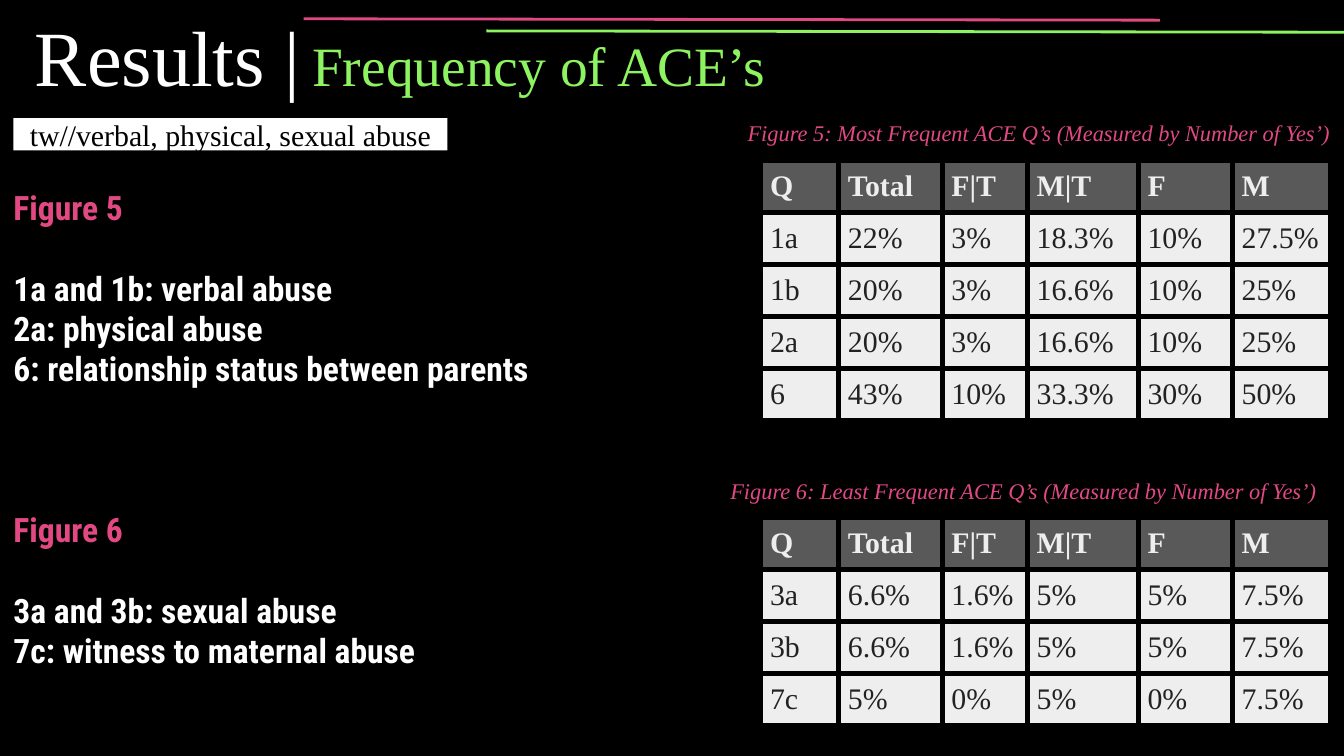
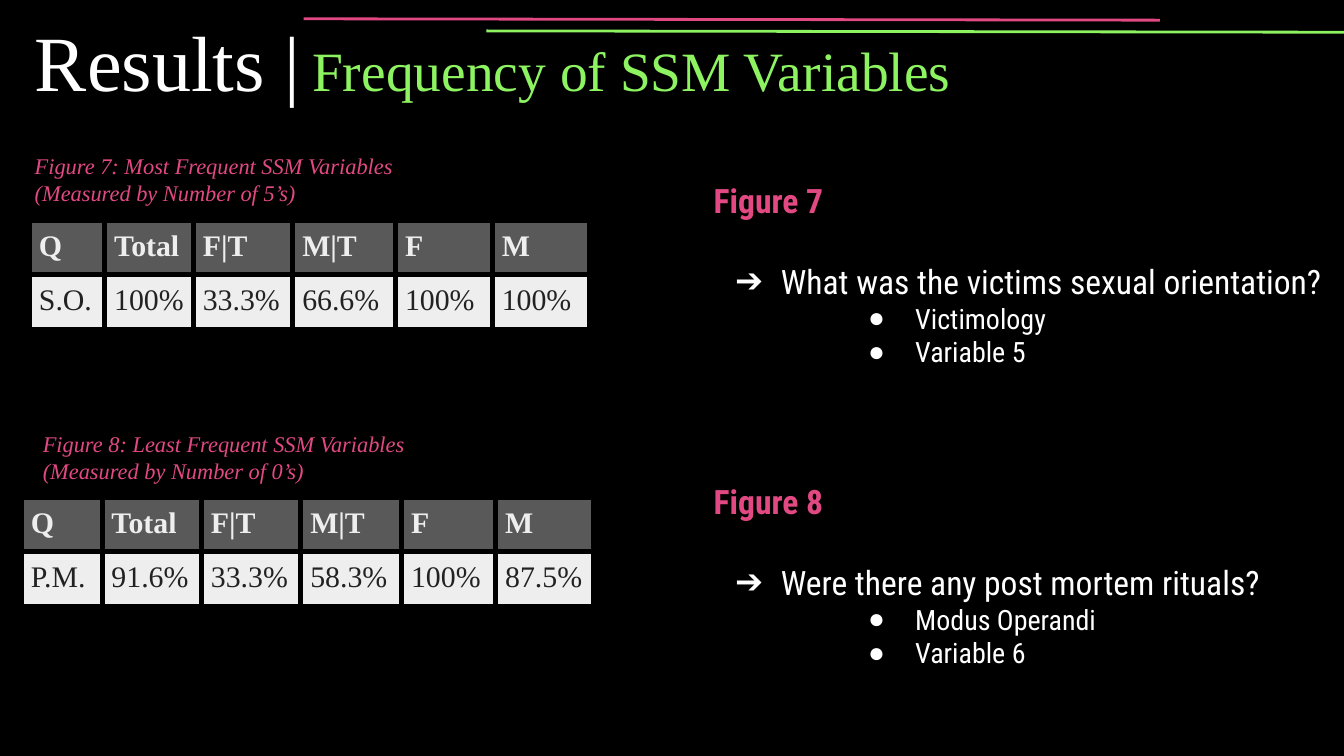
from lxml.etree import SubElement
from pptx import Presentation
from pptx.dml.color import RGBColor
from pptx.enum.shapes import MSO_CONNECTOR, MSO_SHAPE
from pptx.enum.text import MSO_ANCHOR, MSO_AUTO_SIZE, PP_ALIGN
from pptx.oxml.ns import qn
from pptx.util import Inches, Pt

SERIF, SANS = "Times New Roman", "Roboto Condensed"
BLACK, WHITE, PINK, GREEN = "000000", "FFFFFF", "E24983", "8DF361"
HEADER_FILL, CELL_FILL, CELL_INK = "595959", "EEEEEE", "222222"
TITLE_CONTENT, TWO_CONTENT = 1, 3
HEADER = ["Q", "Total", "F|T", "M|T", "F", "M"]
LINE = 21.6  # height of one 18 pt line, in points


def color(value):
    return RGBColor.from_string(value)


def grid(units):
    """The slide is a grid of 100 columns; rows are as tall as columns are wide."""
    return Inches(units / 10)


class ResultsDeck:
    def __init__(self):
        self.deck = Presentation()
        self.deck.slide_width = grid(100)
        self.deck.slide_height = grid(100 * 9 / 16)
        fill = self.deck.slide_master.background.fill
        fill.solid()
        fill.fore_color.rgb = color(BLACK)
        self.page = None

    def new_page(self, layout, topic, title_top):
        """Start a slide with its two-part title and the two top rules."""
        self.page = self.deck.slides.add_slide(self.deck.slide_layouts[layout])
        title = self.page.shapes.title
        self.place(title, 1.6, title_top, 93.2, 6.3)
        para = title.text_frame.paragraphs[0]
        self.format_para(para)
        self.run(para, "Results |", 41.9, SERIF, WHITE)
        self.run(para, " ", 25.2, SERIF, WHITE)
        self.run(para, topic, 29.7, SERIF, GREEN)
        self.rule(36.2, 2.3, 100, 2.4, GREEN)
        self.rule(22.6, 1.4, 86.3, 1.5, PINK)

    # Text helpers
    def place(self, box, left, top, width, height):
        box.left, box.top, box.width, box.height = map(grid, (left, top, width, height))
        self.frame(box)

    def frame(self, box, inset=1):
        frame = box.text_frame
        frame.word_wrap = True
        frame.auto_size = MSO_AUTO_SIZE.NONE
        frame.vertical_anchor = MSO_ANCHOR.TOP
        frame.margin_left = frame.margin_right = grid(inset)
        frame.margin_top = frame.margin_bottom = grid(inset)
        return frame

    def run(self, para, text, size, font, ink, bold=False, italic=False):
        span = para.add_run()
        span.text = text
        style = span.font
        style.size, style.name, style.bold, style.italic = Pt(size), font, bold, italic
        style.color.rgb = color(ink)

    def format_para(self, para, align=PP_ALIGN.LEFT, before=0):
        para.alignment = align
        para.space_before, para.space_after = Pt(before), Pt(0)
        para.line_spacing = 1.0

    def bullet(self, para, char=None, margin=0, hang=0):
        properties = para._p.get_or_add_pPr()
        properties.set("marL", str(grid(margin)))
        properties.set("indent", str(-grid(hang)))
        if char:
            ink = SubElement(properties, qn("a:buClr"))
            SubElement(ink, qn("a:srgbClr")).set("val", WHITE)
            SubElement(properties, qn("a:buChar")).set("char", char)
        else:
            SubElement(properties, qn("a:buNone"))

    def next_para(self, frame):
        first = frame.paragraphs[0]
        return frame.add_paragraph() if first.runs else first

    # Elements
    def rule(self, x1, y1, x2, y2, ink):
        line = self.page.shapes.add_connector(
            MSO_CONNECTOR.STRAIGHT, *map(grid, (x1, y1, x2, y2)))
        line.line.color.rgb = color(ink)
        line.line.width = Pt(1.5)
        SubElement(line._element.spPr, qn("a:effectLst"))

    def caption(self, lines, left, top, width, height, align=PP_ALIGN.LEFT):
        box = self.page.shapes.add_textbox(*map(grid, (left, top, width, height)))
        frame = self.frame(box)
        for text in lines:
            para = self.next_para(frame)
            self.format_para(para, align)
            self.run(para, text, 12, SERIF, PINK, italic=True)

    def warning(self, text, left, top, width, height):
        box = self.page.shapes.add_shape(
            MSO_SHAPE.RECTANGLE, *map(grid, (left, top, width, height)))
        box.shadow.inherit = False
        box.fill.solid()
        box.fill.fore_color.rgb = color(WHITE)
        box.line.fill.background()
        frame = self.frame(box, inset=0)
        frame.vertical_anchor = MSO_ANCHOR.MIDDLE
        para = frame.paragraphs[0]
        self.format_para(para, PP_ALIGN.CENTER)
        self.run(para, text, 16, SERIF, BLACK)

    def body(self, index, left, top, width, height):
        box = self.page.placeholders[index]
        self.place(box, left, top, width, height)
        return box.text_frame

    def heading(self, frame, text, before=0):
        para = self.next_para(frame)
        self.format_para(para, before=before)
        self.bullet(para)
        self.run(para, text, 18, SANS, PINK, bold=True)

    def meanings(self, frame, lines):
        for number, text in enumerate(lines):
            para = frame.add_paragraph()
            self.format_para(para, before=0 if number else LINE)
            self.bullet(para)
            self.run(para, text, 18, SANS, WHITE, bold=True)

    def question(self, frame, text, details):
        para = frame.add_paragraph()
        self.format_para(para, before=LINE)
        self.bullet(para, "➔", 5, 3.4)
        self.run(para, text, 18, SANS, WHITE)
        for detail in details:
            para = frame.add_paragraph()
            para.level = 2
            self.format_para(para)
            self.bullet(para, "●", 15, 3.5)
            self.run(para, detail, 15, SANS, WHITE)

    def table(self, records, left, top, columns, row_height):
        rows = [HEADER] + records
        shape = self.page.shapes.add_table(
            len(rows), len(columns), grid(left), grid(top),
            grid(sum(columns)), grid(row_height * len(rows)))
        table = shape.table
        for column, width in zip(table.columns, columns):
            column.width = grid(width)
        for row_number, values in enumerate(rows):
            table.rows[row_number].height = grid(row_height)
            for column_number, value in enumerate(values):
                self.cell(table.cell(row_number, column_number), value, row_number == 0)

    def cell(self, cell, text, is_header):
        cell.margin_left = cell.margin_right = grid(0.7)
        cell.margin_top = cell.margin_bottom = grid(0.7)
        properties = cell._tc.get_or_add_tcPr()
        for side in ("lnL", "lnR", "lnT", "lnB"):
            border = SubElement(properties, qn("a:" + side))
            border.set("w", str(Pt(3)))
            fill = SubElement(border, qn("a:solidFill"))
            SubElement(fill, qn("a:srgbClr")).set("val", BLACK)
        cell.fill.solid()
        cell.fill.fore_color.rgb = color(HEADER_FILL if is_header else CELL_FILL)
        ink = CELL_FILL if is_header else CELL_INK
        self.run(cell.text_frame.paragraphs[0], text, 16, SERIF, ink, bold=is_header)


def build_ace_page(results):
    results.new_page(TITLE_CONTENT, "Frequency of ACE’s", -0.4)
    results.warning("tw//verbal, physical, sexual abuse", 1, 8.8, 32.3, 2.4)

    # Tables of the most and least frequent questions
    columns = [5.8, 7.7, 6.35, 8.25, 7, 7.3]
    results.caption(["Figure 5: Most Frequent ACE Q’s (Measured by Number of Yes’)"],
                    52.8, 7.9, 47.2, 4, PP_ALIGN.RIGHT)
    results.table([
        ["1a", "22%", "3%", "18.3%", "10%", "27.5%"],
        ["1b", "20%", "3%", "16.6%", "10%", "25%"],
        ["2a", "20%", "3%", "16.6%", "10%", "25%"],
        ["6", "43%", "10%", "33.3%", "30%", "50%"],
    ], 56.6, 11.95, columns, 3.87)
    results.caption(["Figure 6: Least Frequent ACE Q’s (Measured by Number of Yes’)"],
                    47.4, 34.5, 51.6, 4, PP_ALIGN.RIGHT)
    results.table([
        ["3a", "6.6%", "1.6%", "5%", "5%", "7.5%"],
        ["3b", "6.6%", "1.6%", "5%", "5%", "7.5%"],
        ["7c", "5%", "0%", "5%", "0%", "7.5%"],
    ], 56.6, 38.5, columns, 3.87)

    # What the questions stand for
    frame = results.body(1, 0, 12.9, 43.3, 38.4)
    results.heading(frame, "Figure 5")
    results.meanings(frame, ["1a and 1b: verbal abuse", "2a: physical abuse",
                             "6: relationship status between parents"])
    results.heading(frame, "Figure 6", before=3 * LINE)
    results.meanings(frame, ["3a and 3b: sexual abuse", "7c: witness to maternal abuse"])


def build_ssm_page(results):
    results.new_page(TWO_CONTENT, "Frequency of SSM Variables", 0)

    # Tables of the most and least frequent variables
    results.caption(["Figure 7: Most Frequent SSM Variables", "(Measured by Number of 5’s)"],
                    1.6, 10.3, 30.8, 6.1)
    results.table([["S.O.", "100%", "33.3%", "66.6%", "100%", "100%"]],
                  2.2, 16.4, [5.6, 6.6, 7.4, 7.65, 7.2, 7.2], 4.05)
    results.caption(["Figure 8: Least Frequent SSM Variables", "(Measured by Number of 0’s)"],
                    2.2, 31, 43.5, 6.1)
    results.table([["P.M.", "91.6%", "33.3%", "58.3%", "100%", "87.5%"]],
                  1.6, 37, [6, 7.4, 7.4, 7.5, 7, 7.3], 4.05)

    # Questions behind the variables
    questions = [
        ("Figure 7", 12.4, "What was the victims sexual orientation?",
         ["Victimology", "Variable 5"]),
        ("Figure 8", 34.8, "Were there any post mortem rituals?",
         ["Modus Operandi", "Variable 6"]),
    ]
    for index, (figure, top, question, details) in enumerate(questions, start=1):
        frame = results.body(index, 52.1, top, 47.9, 16.2)
        results.heading(frame, figure)
        results.question(frame, question, details)


def main():
    results = ResultsDeck()
    build_ace_page(results)
    build_ssm_page(results)
    results.deck.save("out.pptx")


if __name__ == "__main__":
    main()
